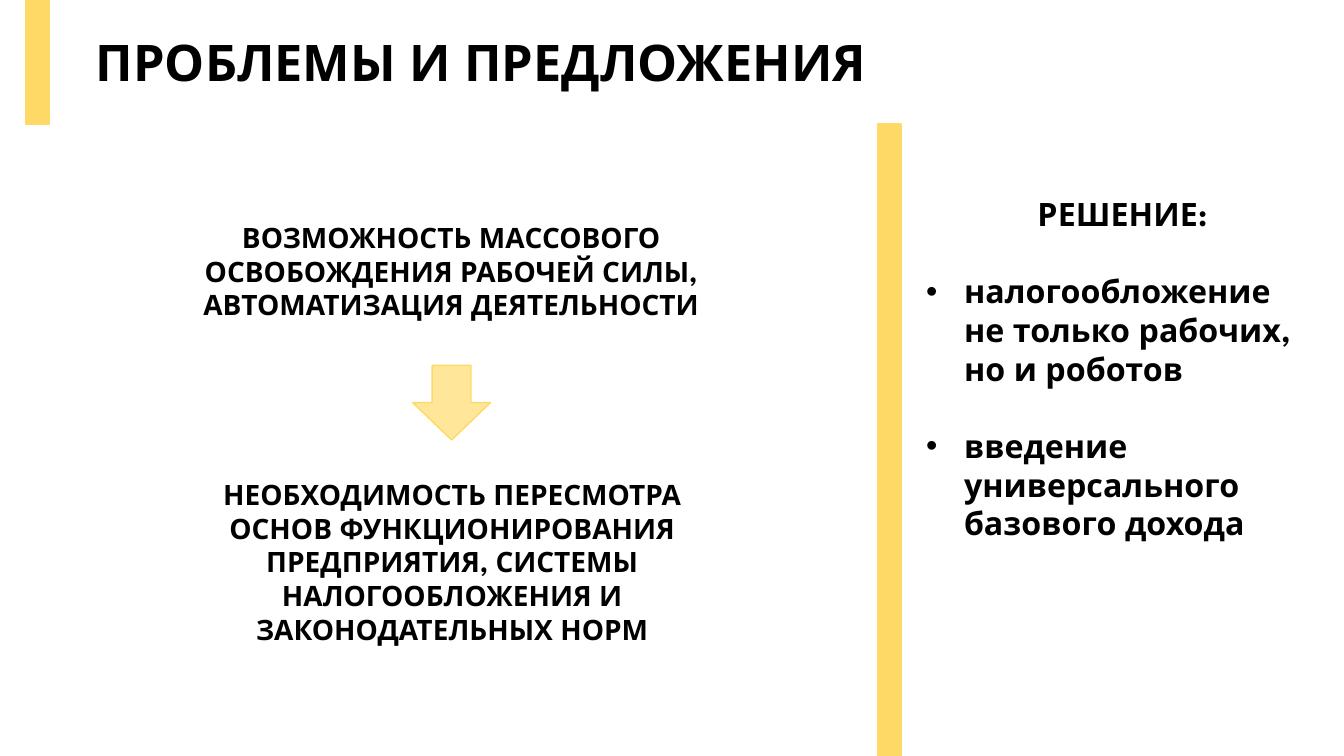
from dataclasses import dataclass

from lxml.etree import SubElement
from pptx import Presentation
from pptx.dml.color import RGBColor
from pptx.enum.shapes import MSO_AUTO_SHAPE_TYPE as ShapeType
from pptx.enum.text import MSO_ANCHOR as Anchor, MSO_AUTO_SIZE as AutoSize, PP_ALIGN as Align
from pptx.oxml.ns import qn
from pptx.slide import Slide
from pptx.text.text import TextFrame
from pptx.util import Pt

BLACK = RGBColor(0x00, 0x00, 0x00)
GOLD = RGBColor(0xFF, 0xD9, 0x66)
PALE_GOLD = RGBColor(0xFF, 0xE6, 0x99)

FONT_FORMAT = {"name": "League Spartan", "bold": True}
FRAME_FORMAT = {
    "word_wrap": True,
    "auto_size": AutoSize.NONE,
    "vertical_anchor": Anchor.TOP,
    "margin_left": Pt(7.2),
    "margin_right": Pt(7.2),
    "margin_top": Pt(3.6),
    "margin_bottom": Pt(3.6),
}
BULLET_INDENT = 27
SOLUTION_SIZE = 23
ITEM_GAP = 27.6  # one line of the solution text


@dataclass(frozen=True)
class Box:
    left: float
    top: float
    width: float
    height: float

    def lengths(self) -> tuple[Pt, Pt, Pt, Pt]:
        return Pt(self.left), Pt(self.top), Pt(self.width), Pt(self.height)


@dataclass(frozen=True)
class Line:
    text: str
    align: Align = Align.CENTER
    bullet: bool = False


@dataclass(frozen=True)
class TextBlock:
    box: Box
    size: float
    lines: tuple[Line, ...]


@dataclass(frozen=True)
class Accent:
    box: Box
    kind: ShapeType = ShapeType.RECTANGLE
    fill: RGBColor = GOLD
    rotation: float = 0


TITLE = TextBlock(
    Box(61.2, 18.72, 771.12, 51.12), 36, (Line("ПРОБЛЕМЫ И ПРЕДЛОЖЕНИЯ", Align.LEFT),)
)

TEXT_BLOCKS = (
    # Problem
    TextBlock(
        Box(134.64, 154.08, 375.12, 79.92),
        20,
        (Line("ВОЗМОЖНОСТЬ МАССОВОГО ОСВОБОЖДЕНИЯ РАБОЧЕЙ СИЛЫ, АВТОМАТИЗАЦИЯ ДЕЯТЕЛЬНОСТИ"),),
    ),
    # Consequence
    TextBlock(
        Box(121.68, 337.68, 402.48, 128.16),
        20,
        (Line("НЕОБХОДИМОСТЬ ПЕРЕСМОТРА ОСНОВ ФУНКЦИОНИРОВАНИЯ ПРЕДПРИЯТИЯ, "
              "СИСТЕМЫ НАЛОГООБЛОЖЕНИЯ И ЗАКОНОДАТЕЛЬНЫХ НОРМ"),),
    ),
    # Solution
    TextBlock(
        Box(654.48, 135.36, 294.48, 257.76),
        SOLUTION_SIZE,
        (
            Line("РЕШЕНИЕ:"),
            Line("налогообложение не только рабочих, но и роботов", Align.LEFT, True),
            Line("введение универсального базового дохода", Align.LEFT, True),
        ),
    ),
)

ACCENTS = (
    Accent(Box(18.72, 0, 16.56, 88.56)),
    Accent(Box(627.12, 88.56, 16.56, 451.44)),
    Accent(Box(295.92, 259.92, 53.28, 55.44), ShapeType.RIGHT_ARROW, PALE_GOLD, 90),
)


def write_lines(frame: TextFrame, block: TextBlock) -> None:
    for name, value in FRAME_FORMAT.items():
        setattr(frame, name, value)
    for index, line in enumerate(block.lines):
        paragraph = frame.add_paragraph() if index else frame.paragraphs[0]
        paragraph.alignment = line.align
        run = paragraph.add_run()
        run.text = line.text
        for name, value in FONT_FORMAT.items():
            setattr(run.font, name, value)
        run.font.size = Pt(block.size)
        run.font.color.rgb = BLACK
        if line.bullet:
            paragraph.space_before = Pt(ITEM_GAP)
            properties = paragraph._p.get_or_add_pPr()
            properties.set("marL", str(Pt(BULLET_INDENT)))
            properties.set("indent", str(-Pt(BULLET_INDENT)))
            SubElement(properties, qn("a:buFont"), typeface="Arial")
            SubElement(properties, qn("a:buChar"), char="•")


def add_title(slide: Slide, block: TextBlock) -> None:
    title = slide.shapes.title
    title.left, title.top, title.width, title.height = block.box.lengths()
    write_lines(title.text_frame, block)


def add_text_block(slide: Slide, block: TextBlock) -> None:
    write_lines(slide.shapes.add_textbox(*block.box.lengths()).text_frame, block)


def add_accent(slide: Slide, accent: Accent) -> None:
    shape = slide.shapes.add_shape(accent.kind, *accent.box.lengths())
    shape.rotation = accent.rotation
    shape.shadow.inherit = False
    shape.fill.solid()
    shape.fill.fore_color.rgb = accent.fill
    shape.line.color.rgb = GOLD
    shape.line.width = Pt(1)


def main() -> None:
    deck = Presentation()
    deck.slide_width, deck.slide_height = Pt(960), Pt(540)
    slide = deck.slides.add_slide(deck.slide_layouts[5])

    add_title(slide, TITLE)
    for accent in ACCENTS:
        add_accent(slide, accent)
    for block in TEXT_BLOCKS:
        add_text_block(slide, block)

    deck.save("out.pptx")


if __name__ == "__main__":
    main()
